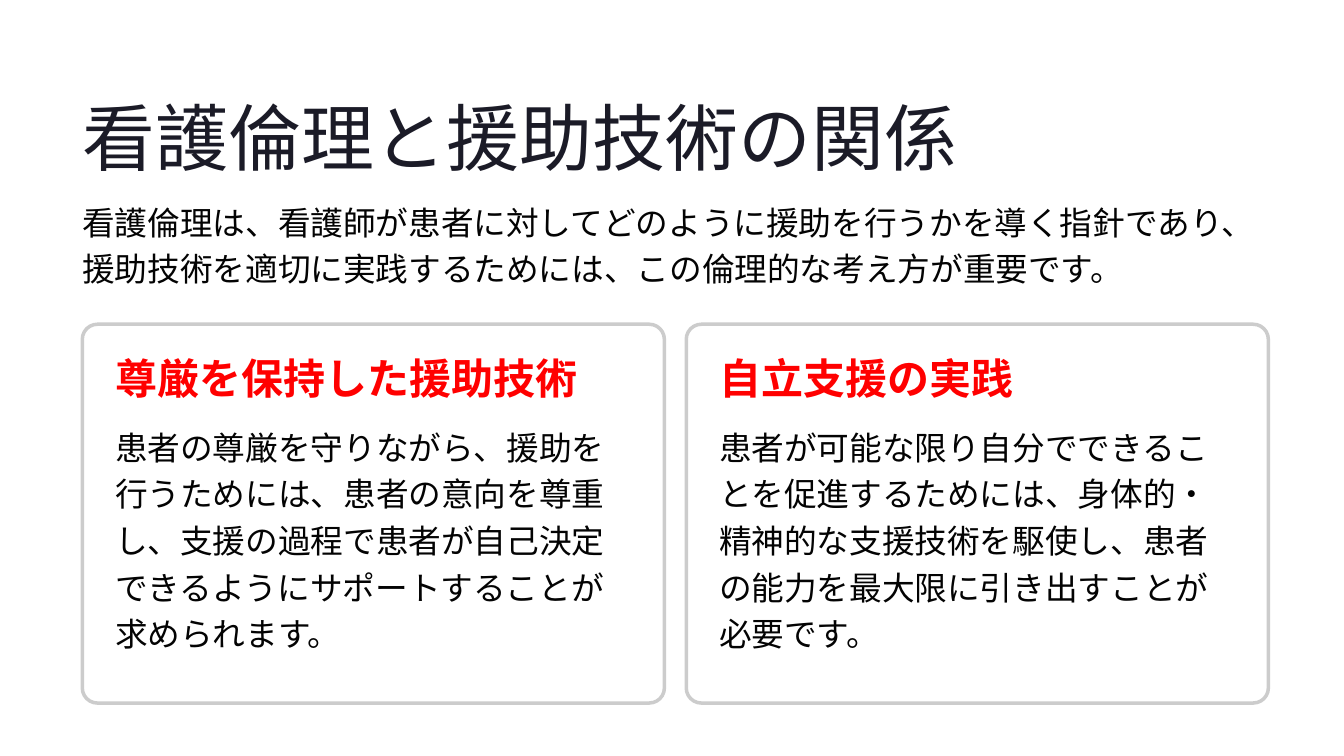
from dataclasses import dataclass

from pptx import Presentation
from pptx.dml.color import RGBColor
from pptx.enum.shapes import MSO_SHAPE
from pptx.enum.text import MSO_ANCHOR, PP_ALIGN
from pptx.slide import Slide
from pptx.util import Inches, Pt

ROUND = MSO_SHAPE.ROUNDED_RECTANGLE
TOP = MSO_ANCHOR.TOP
LEFT = PP_ALIGN.LEFT


@dataclass(frozen=True)
class Style:
    font: str
    size: float
    lead: float
    color: str
    bold: bool = False
    wrap: bool = True


@dataclass(frozen=True)
class Theme:
    title: Style = Style("Inter", 62.5, 78.5, "1B1B27", wrap=False)
    head: Style = Style("Inter", 36, 39, "FF0000", bold=True, wrap=False)
    body: Style = Style("Karla", 28, 40, "030303")
    fill: str = "FFFFFF"
    edge: str = "CCCCCC"


@dataclass(frozen=True)
class Card:
    head: str
    body: str


THEME = Theme()
MARGIN = 0.98
CARD_TOP, CARD_W, CARD_H = 3.86, 6.93, 4.51
STEP = 7.19  # card width plus gap
PAD = 0.39

CARDS = [
    Card(
        "尊厳を保持した援助技術",
        "患者の尊厳を守りながら、援助を行うためには、患者の意向を尊重し、"
        "支援の過程で患者が自己決定できるようにサポートすることが求められます。",
    ),
    Card(
        "自立支援の実践",
        "患者が可能な限り自分でできることを促進するためには、身体的・"
        "精神的な支援技術を駆使し、患者の能力を最大限に引き出すことが必要です。",
    ),
]


def add_text(slide: Slide, text: str, style: Style,
             x: float, y: float, w: float, h: float) -> None:
    box = slide.shapes.add_textbox(Inches(x), Inches(y), Inches(w), Inches(h))
    frame = box.text_frame
    frame.margin_left = frame.margin_right = 0
    frame.margin_top = frame.margin_bottom = 0
    frame.vertical_anchor = TOP
    frame.word_wrap = style.wrap
    para = frame.paragraphs[0]
    para.alignment = LEFT
    para.line_spacing = Pt(style.lead)
    run = para.add_run()
    run.text = text
    run.font.name = style.font
    run.font.size = Pt(style.size)
    run.font.bold = style.bold
    run.font.color.rgb = RGBColor.from_string(style.color)


def add_card(slide: Slide, card: Card, x: float) -> None:
    # Frame
    panel = slide.shapes.add_shape(
        ROUND, Inches(x), Inches(CARD_TOP), Inches(CARD_W), Inches(CARD_H))
    panel.adjustments[0] = 0.04
    panel.shadow.inherit = False
    panel.fill.solid()
    panel.fill.fore_color.rgb = RGBColor.from_string(THEME.fill)
    panel.line.color.rgb = RGBColor.from_string(THEME.edge)
    panel.line.width = Pt(3)

    # Heading and text
    width = CARD_W - 2 * PAD
    add_text(slide, card.head, THEME.head, x + PAD, CARD_TOP + PAD, width, 0.65)
    add_text(slide, card.body, THEME.body, x + PAD, CARD_TOP + 1.14, width, 2.67)


def main() -> None:
    deck = Presentation()
    deck.slide_width, deck.slide_height = Inches(16), Inches(9)
    slide = deck.slides.add_slide(deck.slide_layouts[6])

    # Title and lead
    add_text(slide, "看護倫理と援助技術の関係", THEME.title,
             MARGIN, 1.05, 10.47, 1.09)
    add_text(
        slide,
        "看護倫理は、看護師が患者に対してどのように援助を行うかを導く指針であり、"
        "援助技術を適切に実践するためには、この倫理的な考え方が重要です。",
        THEME.body, MARGIN, 2.32, 14.05, 1.12)

    # Cards
    for i, card in enumerate(CARDS):
        add_card(slide, card, MARGIN + i * STEP)

    deck.save("out.pptx")


if __name__ == "__main__":
    main()
